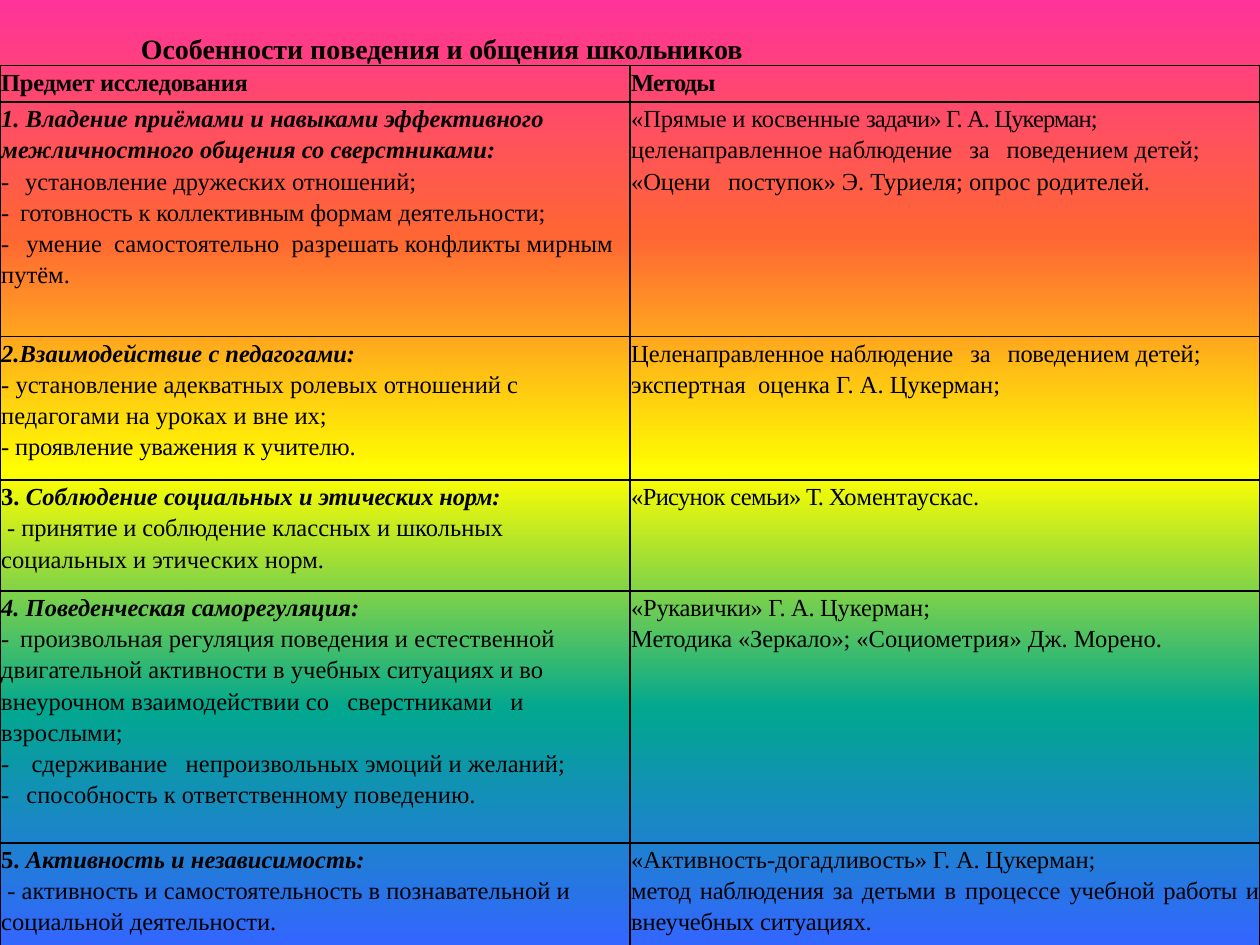
import pptx
import pptx.dml.color
import pptx.enum.text
import pptx.oxml
import pptx.oxml.ns
import pptx.util
from lxml import etree
from pptx.util import Inches

FONT = "Times New Roman"
BLACK = "000000"
RAINBOW = [(0, "FF3399"), (25, "FF6633"), (50, "FFFF00"), (75, "01A78F"), (100, "3366FF")]
ROW_HEIGHTS = [0.29, 1.86, 1.14, 0.88, 2, 0.86]
COLUMN_WIDTHS = [5, 5]
JUSTIFY = {"alignment": pptx.enum.text.PP_ALIGN.JUSTIFY}

# A paragraph is (options, runs); a run is (text, style letters, letter spacing).
TITLE = [({}, [("Особенности по", "b", 0), ("ведения и общения ", "b", -0.1),
               ("школьни", "b", -0.3), ("ков", "b", 0)])]

ROWS = [
    ([({}, [("Предмет исследования", "b", -0.2)])],
     [({}, [("Методы", "b", -0.5)])]),
    ([({}, [("1. Владение приёмами и навыками эффективного межличностного общения "
             "со сверстниками:", "bi", 0)]),
      ({"tab": 0.19}, [("-\tустановление дружеских отношений;", "", 0)]),
      ({"tab": 0.15}, [("-\t", "", 0), ("готовность к коллективным фор", "", -0.1),
                       ("мам деятельности;", "", 0)]),
      ({"tab": 0.2}, [("-\tумение  самостоятельно  разрешать конфликты мирным путём.", "", 0)])],
     [({}, [("«Прямые и косвенные ", "", -0.1), ("задачи» Г. А. Цукерман; ", "", -0.5),
            ("целенаправленное на", "", 0), ("блюдение   за   поведе", "", -0.2),
            ("нием детей; ", "", 0), ("«Оцени   поступок» ", "", -0.1),
            ("Э. Туриеля; опрос родителей.", "", 0)])]),
    ([({}, [("2.Взаимодействие с педагогами:", "bi", 0)]),
      ({}, [("- установление адекватных ролевых отношений с педагогами на уроках "
             "и вне их;", "", 0)]),
      ({}, [("- проявление уважения к учителю.", "", -0.1)])],
     [({}, [("Целенаправленное на", "", -0.1), ("блюдение   за   поведе", "", -0.2),
            ("нием детей; экспертная  оценка Г. А. Цукерман;", "", 0)])]),
    ([({}, [("3. ", "b", 0), ("Соблюдение социальных и эти", "bi", 0),
            ("ческих норм:", "bi", -0.1)]),
      ({}, [(" - ", "i", -0.1), ("принятие и соблюде", "", -0.1),
            ("ние классных и школьных социальных и этических норм.", "", 0)])],
     [(JUSTIFY, [("«Рисунок семьи» Т. Хо", "", -0.4), ("ментаускас.", "", 0)])]),
    ([({}, [("4. Поведенческая саморегуляция:", "bi", 0)]),
      ({"tab": 0.15}, [("-\tпроизвольная регуляция поведения и естественной двигательной "
                        "активности в учебных ситуациях и во внеурочном взаимодействии "
                        "со   сверстниками   и   взрослыми;", "", 0)]),
      ({"tab": 0.24}, [("-\tсдерживание   непроизвольных эмоций и желаний;", "", 0)]),
      ({"tab": 0.2}, [("-\tспособность к ответственному поведению.", "", 0)])],
     [(JUSTIFY, [("«Рукавички» Г. А. Цу", "", -0.2), ("керман;", "", 0)]),
      (JUSTIFY, [("Методика «Зеркало»; ", "", -0.1), ("«Социометрия» Дж. Морено.", "", 0)])]),
    ([({}, [("5. ", "b", 0), ("Активность и независимость:", "bi", 0)]),
      ({}, [(" - активность и самостоятельность в познавательной и социальной "
             "деятельности.", "", 0)])],
     [(JUSTIFY, [("«Активность-догад", "", 0), ("ливость» Г. А. Цукер", "", -0.1),
                 ("ман;", "", 0)]),
      (JUSTIFY, [("метод наблюдения за ", "", -0.1), ("детьми в процессе ", "", 0),
                 ("учебной работы и внеучебных ситуациях.", "", -0.1)])]),
]


def color(value):
    return pptx.dml.color.RGBColor.from_string(value)


def assign(target, values):
    for name, value in values.items():
        setattr(target, name, value)


def child(parent, tag, **attributes):
    return etree.SubElement(parent, pptx.oxml.ns.qn(tag), attributes)


def write(frame, paragraphs, size):
    for index, (options, runs) in enumerate(paragraphs):
        para = frame.add_paragraph() if index else frame.paragraphs[0]
        para.line_spacing = 1.15
        if "alignment" in options:
            para.alignment = options["alignment"]
        if "tab" in options:
            stops = child(para._p.get_or_add_pPr(), "a:tabLst")
            child(stops, "a:tab", pos=str(Inches(options["tab"])), algn="l")
        for text, style, spacing in runs:
            span = para.add_run()
            span.text = text
            assign(span.font, {"name": FONT, "size": pptx.util.Pt(size),
                               "bold": "b" in style, "italic": "i" in style})
            span.font.color.rgb = color(BLACK)
            span._r.get_or_add_rPr().set("spc", str(round(spacing * 100)))


def paint_background(page):
    page.background.fill.gradient()
    gradient = page._element.find(".//" + pptx.oxml.ns.qn("a:gradFill"))
    for part in list(gradient):
        gradient.remove(part)
    stops = child(gradient, "a:gsLst")
    for percent, value in RAINBOW:
        child(child(stops, "a:gs", pos=str(percent * 1000)), "a:srgbClr", val=value)
    child(gradient, "a:lin", ang=str(90 * 60000), scaled="0")


def add_borders(cell):
    properties = cell._tc.get_or_add_tcPr()
    for side in ("a:lnL", "a:lnR", "a:lnT", "a:lnB"):
        line = child(properties, side, w=str(pptx.util.Pt(1)))
        child(child(line, "a:solidFill"), "a:srgbClr", val=BLACK)


def add_methods_table(page):
    table = page.shapes.add_table(
        len(ROWS), len(COLUMN_WIDTHS), Inches(0), Inches(0.52),
        Inches(sum(COLUMN_WIDTHS)), Inches(sum(ROW_HEIGHTS))).table
    assign(table, {"first_row": False, "horz_banding": False})
    for column, width in zip(table.columns, COLUMN_WIDTHS):
        column.width = Inches(width)
    for row, height, contents in zip(table.rows, ROW_HEIGHTS, ROWS):
        row.height = Inches(height)
        for cell, paragraphs in zip(row.cells, contents):
            assign(cell, {"margin_left": Inches(0.01), "margin_right": Inches(0.01),
                          "margin_top": 0, "margin_bottom": 0})
            add_borders(cell)
            cell.fill.background()
            write(cell.text_frame, paragraphs, 14)


def add_title(page):
    box = page.shapes.add_textbox(Inches(1.02), Inches(0.16), Inches(6.88), Inches(0.39))
    assign(box.text_frame, {"word_wrap": True,
                            "auto_size": pptx.enum.text.MSO_AUTO_SIZE.SHAPE_TO_FIT_TEXT})
    write(box.text_frame, TITLE, 16)


def main():
    deck = pptx.Presentation()
    assign(deck, {"slide_width": Inches(10), "slide_height": Inches(7.5)})
    page = deck.slides.add_slide(deck.slide_layouts[6])
    paint_background(page)
    add_methods_table(page)
    add_title(page)
    deck.save("out.pptx")


if __name__ == "__main__":
    main()
